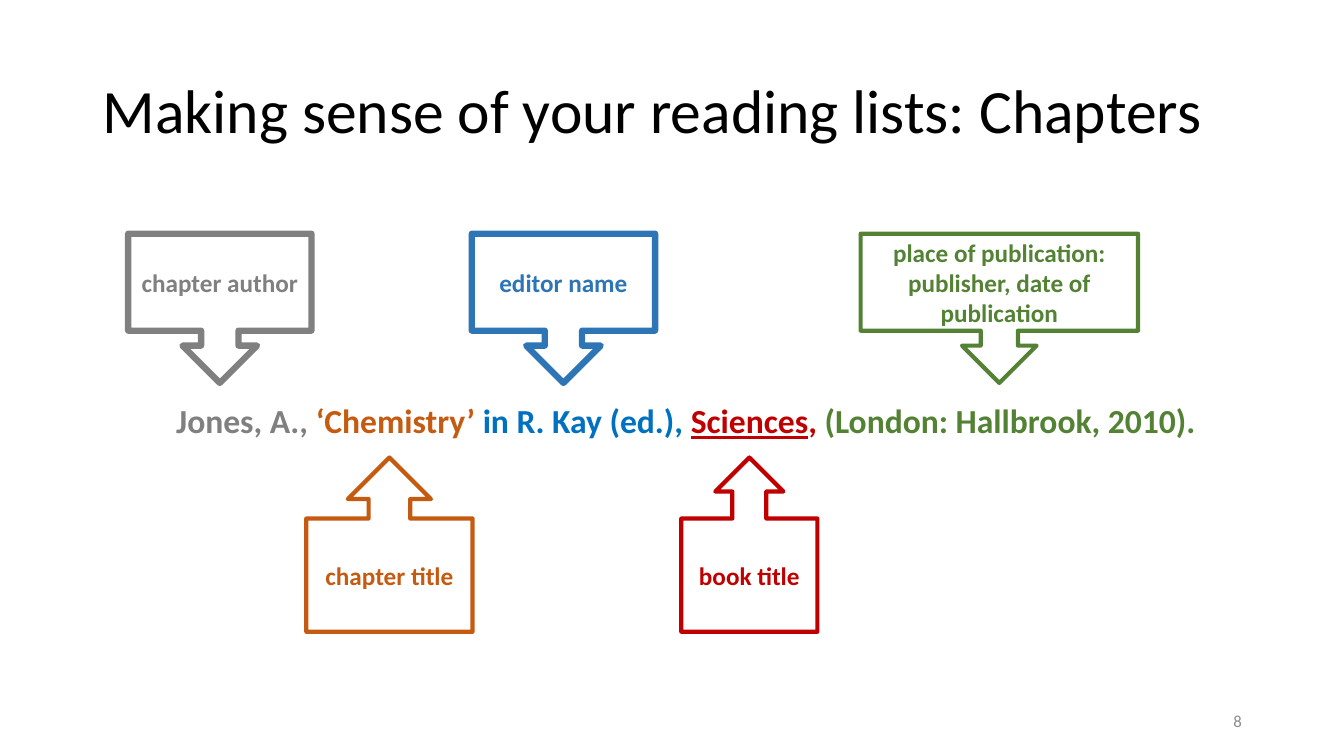
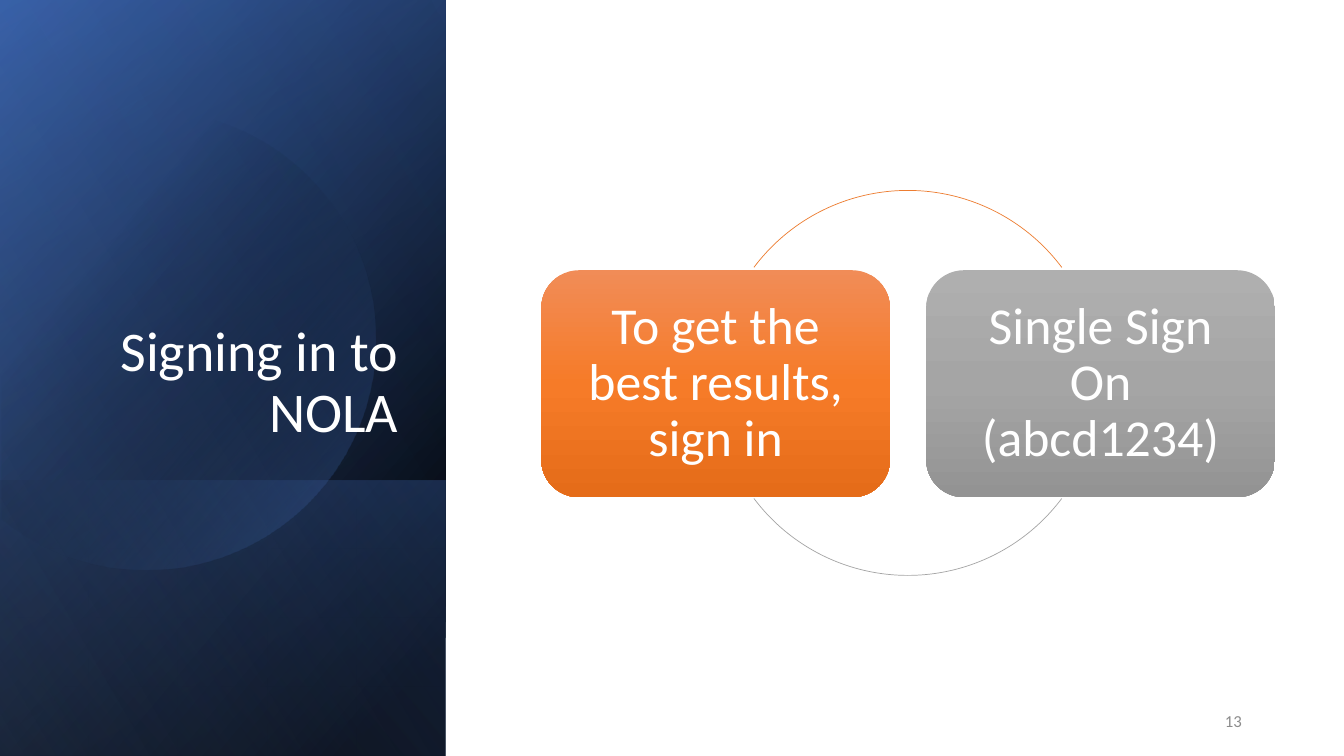
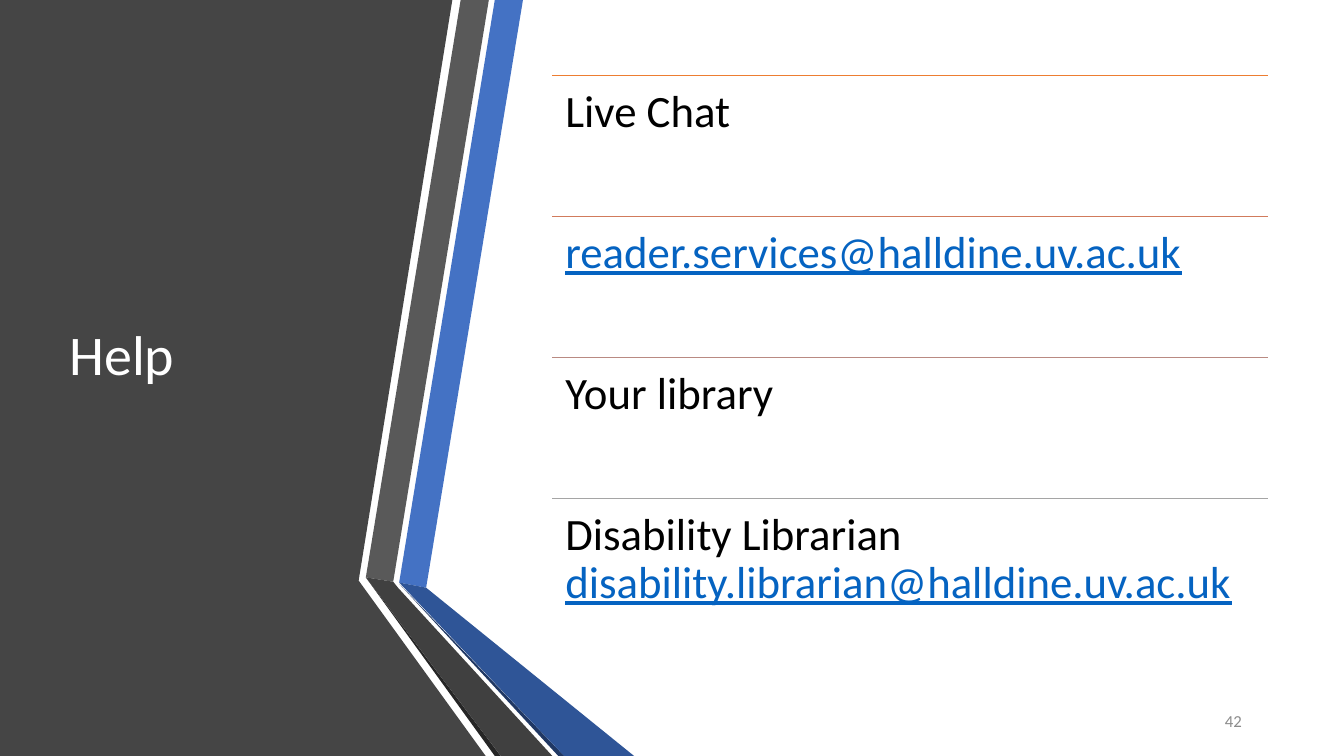
import math

from pptx import Presentation, util as u
from pptx.dml.color import RGBColor
from pptx.enum import shapes, text
from pptx.oxml import parse_xml
from pptx.oxml.ns import nsdecls, qn

BLACK = RGBColor(0x00, 0x00, 0x00)
WHITE = RGBColor(0xFF, 0xFF, 0xFF)
PAGE_GREY = RGBColor(0x8C, 0x8C, 0x8C)
GREY = RGBColor(0x80, 0x80, 0x80)
RUST = RGBColor(0xC5, 0x5A, 0x11)
STEEL = RGBColor(0x2E, 0x75, 0xB6)
BLUE = RGBColor(0x00, 0x70, 0xC0)
RED = RGBColor(0xC0, 0x00, 0x00)
GREEN = RGBColor(0x54, 0x82, 0x35)
LINK = RGBColor(0x05, 0x63, 0xC1)
ACCENT = RGBColor(0x44, 0x72, 0xC4)
NAVY = RGBColor(0x2F, 0x55, 0x97)
DEEP_NAVY = RGBColor(0x20, 0x38, 0x64)
PALE_BLUE = RGBColor(0x8F, 0xAA, 0xDC)
ORANGE = RGBColor(0xED, 0x7D, 0x31)
SILVER = RGBColor(0xA5, 0xA5, 0xA5)
CLAY = RGBColor(0xD1, 0x7B, 0x5C)
ROSE = RGBColor(0xB9, 0x8A, 0x82)
CHARCOAL = RGBColor(0x45, 0x45, 0x45)
DIM_GREY = RGBColor(0x59, 0x59, 0x59)
DARK_GREY = RGBColor(0x40, 0x40, 0x40)
SOOT = RGBColor(0x26, 0x26, 0x26)
ORANGE_STOPS = [(0, RGBColor(0xF1, 0x8C, 0x57), 100),
                (50, RGBColor(0xF6, 0x7B, 0x28), 100),
                (100, RGBColor(0xE5, 0x6C, 0x19), 100)]
SILVER_STOPS = [(0, RGBColor(0xAF, 0xAF, 0xAF), 100),
                (50, SILVER, 100),
                (100, RGBColor(0x93, 0x93, 0x93), 100)]

SHAPE = shapes.MSO_SHAPE
LEFT, CENTER, RIGHT = text.PP_ALIGN.LEFT, text.PP_ALIGN.CENTER, text.PP_ALIGN.RIGHT
TOP, MIDDLE, BOTTOM = text.MSO_ANCHOR.TOP, text.MSO_ANCHOR.MIDDLE, text.MSO_ANCHOR.BOTTOM
WIDTH, HEIGHT = 33.87, 19.05


def cm(*lengths):
    return [u.Cm(n) for n in lengths]


class Deck:
    font = "Calibri"

    def __init__(self):
        self.prs = Presentation()
        self.prs.slide_width, self.prs.slide_height = cm(WIDTH, HEIGHT)
        self.s = None

    def slide(self, number):
        self.s = self.prs.slides.add_slide(self.prs.slide_layouts[6])
        self.text((23.93, 17.65, 7.62, 1.02), [(str(number), PAGE_GREY)], 12,
                  align=RIGHT, anchor=MIDDLE, spacing=1.0)

    def set_text(self, sp, runs, size, align=LEFT, anchor=TOP, spacing=0.9,
                 bold=False, inset=None):
        tf = sp.text_frame
        tf.word_wrap = True
        tf.vertical_anchor = anchor
        if inset is not None:
            tf.margin_left = tf.margin_right = u.Cm(inset)
            tf.margin_top = tf.margin_bottom = u.Cm(inset)
        p = tf.paragraphs[0]
        p.alignment, p.line_spacing = align, spacing
        for words, color, *underline in runs:
            r = p.add_run()
            r.text = words
            f = r.font
            f.name, f.size, f.bold = self.font, u.Pt(size), bold
            f.color.rgb = color
            if underline:
                f.underline = True

    def text(self, box, runs, size, **style):
        self.set_text(self.s.shapes.add_textbox(*cm(*box)), runs, size, **style)

    def title(self, box, words, color=WHITE, size=40, **style):
        self.text(box, [(words, color)], size, **style)

    def shape(self, kind, box, fill=None, line=None, weight=1):
        sp = self.s.shapes.add_shape(kind, *cm(*box))
        return self.paint(sp, fill, line, weight)

    def paint(self, sp, fill=None, line=None, weight=1):
        sp.shadow.inherit = False
        if fill is None:
            sp.fill.background()
        else:
            sp.fill.solid()
            sp.fill.fore_color.rgb = fill
        if line is None:
            sp.line.fill.background()
        else:
            sp.line.color.rgb = line
            sp.line.width = u.Pt(weight)
        return sp

    def gradient(self, sp, stops, angle):
        marks = "".join(
            f'<a:gs pos="{pos * 1000}"><a:srgbClr val="{color}">'
            f'<a:alpha val="{opacity * 1000}"/></a:srgbClr></a:gs>'
            for pos, color, opacity in stops)
        fill = parse_xml(
            f'<a:gradFill {nsdecls("a")} rotWithShape="1"><a:gsLst>{marks}</a:gsLst>'
            f'<a:lin ang="{angle * 60000}" scaled="0"/></a:gradFill>')
        spPr = sp._element.spPr
        spPr.replace(spPr.find(qn("a:noFill")), fill)

    def callout(self, kind, box, words, color, weight):
        sp = self.shape(kind, box, WHITE, color, weight)
        self.set_text(sp, [(words, color)], 18, align=CENTER, anchor=MIDDLE,
                      spacing=1.0, bold=True)

    def panel(self, top, width, height, stops, angle):
        sp = self.shape(SHAPE.RECTANGLE, ((width - height) / 2,
                        top + (height - width) / 2, height, width))
        sp.rotation = 90
        sp._element.spPr.xfrm.set("flipH", "1")
        self.gradient(sp, stops, angle)

    def outline(self, points, fill=None):
        (x, y), *rest = [cm(*point) for point in points]
        fb = self.s.shapes.build_freeform(x, y)
        fb.add_line_segments(rest, close=True)
        return self.paint(fb.convert_to_shape(), fill)

    def card(self, box, words, stops):
        sp = self.shape(SHAPE.ROUNDED_RECTANGLE, box)
        self.gradient(sp, stops, 90)
        self.set_text(sp, [(words, WHITE)], 37, align=CENTER, anchor=MIDDLE, inset=0.38)

    def arc(self, box, start, end, color):
        sp = self.shape(SHAPE.ARC, box, line=color, weight=0.5)
        for i, degrees in enumerate((start, end)):
            sp.adjustments[i] = degrees * 0.6

    def rule(self, x, y, width, color):
        line = self.s.shapes.add_connector(
            shapes.MSO_CONNECTOR.STRAIGHT, *cm(x, y, x + width, y))
        line.line.color.rgb = color
        line.line.width = u.Pt(1)
        line._element.spPr.append(parse_xml(f'<a:effectLst {nsdecls("a")}/>'))


def chapters(d):
    d.slide(8)
    d.title((2.34, 1.02, 29.21, 3.68), "Making sense of your reading lists: Chapters",
            BLACK, 44, anchor=MIDDLE)
    d.text((4.19, 10.08, 27.4, 1.45), [
        ("Jones, A., ", GREY), ("‘Chemistry’ ", RUST), ("in R. Kay (ed.), ", BLUE),
        ("Sciences", RED, True), (", ", RED),
        ("(London: Hallbrook, 2010).", GREEN)], 24, bold=True)
    for x, width, words, color, weight in (
            (3.23, 4.62, "chapter author", GREY, 4.5),
            (11.89, 4.62, "editor name", STEEL, 4.5),
            (21.69, 6.99, "place of publication: publisher, date of publication",
             GREEN, 3)):
        d.callout(SHAPE.DOWN_ARROW_CALLOUT, (x, 5.89, width, 3.76), words, color, weight)
    for x, width, words, color in ((7.72, 4.19, "chapter title", RUST),
                                   (17.17, 3.43, "book title", RED)):
        d.callout(SHAPE.UP_ARROW_CALLOUT, (x, 11.53, width, 4.39), words, color, 3)


def signing_in(d):
    d.slide(13)
    side = 11.23
    d.panel(0, side, HEIGHT, [(8, BLACK, 100), (100, NAVY, 100)], 50)
    d.panel(0, side, HEIGHT, [(0, BLACK, 0), (99, ACCENT, 46)], 30)
    d.panel(12.1, side, HEIGHT - 12.1, [(2, ACCENT, 29), (100, BLACK, 30)], 130)
    x, y, radius = 3.68, 8.56, 5.79
    disc = d.outline([(x + radius * math.cos(math.radians(a)),
                       y + radius * math.sin(math.radians(a)))
                      for a in range(-129, 130, 3)])
    d.gradient(disc, [(29, BLACK, 0), (100, ACCENT, 43)], 40)
    d.panel(0, side, HEIGHT, [(0, BLACK, 0), (99, PALE_BLUE, 11)], 120)
    d.title((1.63, 4.67, 8.66, 6.65), "Signing in to NOLA", align=RIGHT, anchor=BOTTOM)

    left, pitch = 13.64, 9.7
    for i, (words, stops) in enumerate((
            ("To get the best results, sign in", ORANGE_STOPS),
            ("Single Sign On (abcd1234)", SILVER_STOPS))):
        d.card((left + i * pitch, 6.81, 8.79, 5.72), words, stops)
    ring = (18.03, 4.8, pitch, pitch)
    d.arc(ring, 216.9, 323.1, ORANGE)
    d.arc(ring, 36.9, 143.1, SILVER)


def get_help(d):
    d.slide(42)
    for fill, points in (
            (CHARCOAL, [(0, 0), (11.4, 0), (9.04, 14.63), (12.24, HEIGHT), (0, HEIGHT)]),
            (ACCENT, [(10.06, 14.68), (10.74, 14.81), (13.18, 0), (12.47, 0)]),
            (DIM_GREY, [(12.32, 0), (11.61, 0), (9.22, 14.55), (9.91, 14.66)]),
            (SOOT, [(9.22, 14.55), (12.47, HEIGHT), (12.62, HEIGHT)]),
            (DEEP_NAVY, [(10.06, 14.71), (14.07, HEIGHT), (14.22, HEIGHT)]),
            (NAVY, [(10.06, 14.68), (14.22, HEIGHT), (15.98, HEIGHT), (10.74, 14.81)]),
            (DARK_GREY, [(13.92, HEIGHT), (10.03, 14.81), (9.91, 14.66),
                         (9.22, 14.55), (12.62, HEIGHT)])):
        d.outline(points, fill)
    d.title((1.5, 1.91, 7.72, 14.17), "Help", anchor=MIDDLE)

    left, top, width, pitch = 13.92, 1.91, 18.03, 3.55
    for i, (color, runs) in enumerate((
            (ORANGE, [("Live Chat", BLACK)]),
            (CLAY, [("reader.services@halldine.uv.ac.uk", LINK, True)]),
            (ROSE, [("Your library", BLACK)]),
            (SILVER, [("Disability Librarian ", BLACK),
                      ("disability.librarian@halldine.uv.ac.uk", LINK, True)]))):
        y = top + i * pitch
        d.rule(left, y, width, color)
        d.text((left, y, width, pitch), runs, 32, inset=0.33)


def main():
    d = Deck()
    chapters(d)
    signing_in(d)
    get_help(d)
    d.prs.save("out.pptx")


if __name__ == "__main__":
    main()
